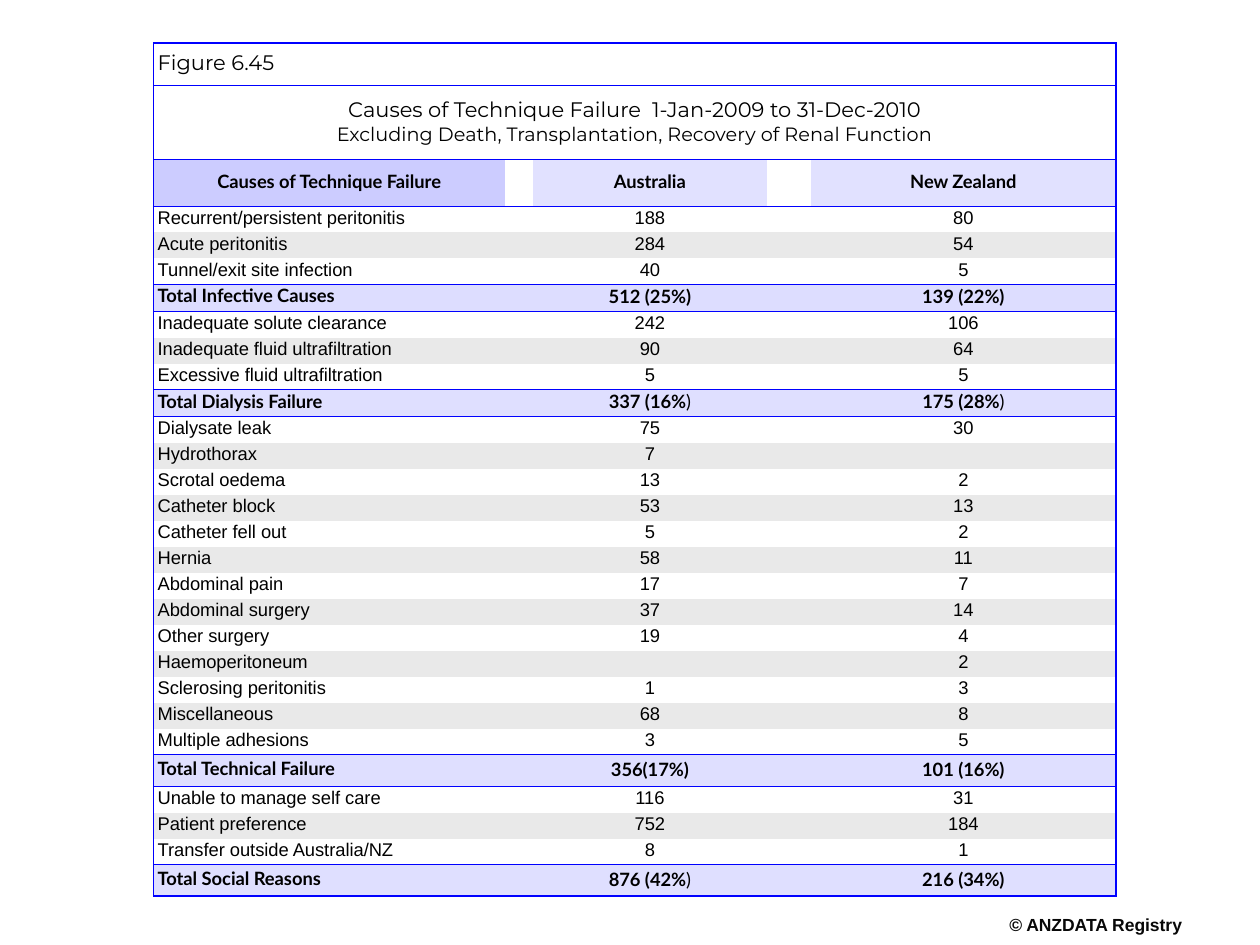
"""Build a slide with a table of causes of technique failure in Australia and New Zealand."""
from lxml import etree
from pptx import Presentation
from pptx import util as u
from pptx.dml.color import RGBColor
from pptx.enum import text
from pptx.oxml.ns import qn

COLORS = {"text": "000000", "credit": "080808", "border": "0000FF", "band": "E9E9E9",
          "head": "CCCCFF", "country": "E1E1FF", "infective": "DDDDFF", "total": "DFDFFF"}
SIZE = 10.5
EMPTY_SIZE = 8
DATA_HEIGHT = 14.86
GROUPS = [
    ([("Recurrent/persistent peritonitis", "188", "80"),
      ("Acute peritonitis", "284", "54"),
      ("Tunnel/exit site infection", "40", "5")],
     ("Total Infective Causes", "512 (25%)", "139 (22%)"), 15.7, "infective"),
    ([("Inadequate solute clearance", "242", "106"),
      ("Inadequate fluid ultrafiltration", "90", "64"),
      ("Excessive fluid ultrafiltration", "5", "5")],
     ("Total Dialysis Failure", "337 (16%)", "175 (28%)"), 15.4, "total"),
    ([("Dialysate leak", "75", "30"),
      ("Hydrothorax", "7", ""),
      ("Scrotal oedema", "13", "2"),
      ("Catheter block", "53", "13"),
      ("Catheter fell out", "5", "2"),
      ("Hernia", "58", "11"),
      ("Abdominal pain", "17", "7"),
      ("Abdominal surgery", "37", "14"),
      ("Other surgery", "19", "4"),
      ("Haemoperitoneum", "", "2"),
      ("Sclerosing peritonitis", "1", "3"),
      ("Miscellaneous", "68", "8"),
      ("Multiple adhesions", "3", "5")],
     ("Total Technical Failure", "356(17%)", "101 (16%)"), 18.4, "total"),
    ([("Unable to manage self care", "116", "31"),
      ("Patient preference", "752", "184"),
      ("Transfer outside Australia/NZ", "8", "1")],
     ("Total Social Reasons", "876 (42%)", "216 (34%)"), 18, "total"),
]
LIGHT_BRACKET = {"337 (16%)", "175 (28%)", "876 (42%)"}


def write(paragraph, words, font, size, bold=False, centred=True, spacing=0.85, after=0, color="text"):
    paragraph.text = words
    paragraph.line_spacing = spacing
    paragraph.space_after = u.Pt(after)
    paragraph.alignment = text.PP_ALIGN.CENTER if centred else text.PP_ALIGN.LEFT
    if words in LIGHT_BRACKET:
        paragraph.text = words[:-1]
        paragraph.add_run().text = ")"
    for run in paragraph.runs:
        run.font.name = font
        run.font.size = u.Pt(size)
        run.font.bold = bold and run.text != ")"
        run.font.color.rgb = RGBColor.from_string(COLORS[color])


def add_borders(cell, weights):
    properties = cell._tc.get_or_add_tcPr()
    for index, (side, weight) in enumerate(zip("LRTB", weights)):
        edge = etree.Element(qn(f"a:ln{side}"), w=str(u.Pt(weight)))
        if weight:
            fill = etree.SubElement(edge, qn("a:solidFill"))
            etree.SubElement(fill, qn("a:srgbClr"), val=COLORS["border"])
        else:
            etree.SubElement(edge, qn("a:noFill"))
        properties.insert(index, edge)


heights = [24.3, 42.5, 26.6]
fills = [[None] * 5, [None] * 5, ["head", None, "country", None, "country"]]
entries = [("Causes of Technique Failure", "Australia", "New Zealand")]
kinds = ["title", "title", "head"]
below = [1, 1, 1]
for causes, total, total_height, total_fill in GROUPS:
    for position, cause in enumerate(causes):
        entries.append(cause)
        heights.append(DATA_HEIGHT)
        fills.append(["band" if position % 2 else None] * 5)
        kinds.append("cause")
        below.append(0.75 if position == len(causes) - 1 else 0)
    entries.append(total)
    heights.append(total_height)
    fills.append([total_fill] * 5)
    kinds.append("total")
    below.append(0.75)
below[-1] = 1
above = [1] + below[:-1]

prs = Presentation()
prs.slide_width, prs.slide_height = u.Pt(720), u.Pt(540)
slide = prs.slides.add_slide(prs.slide_layouts[6])

widths = [200.8, 16, 133.7, 25.1, 174.4]
frame = slide.shapes.add_table(len(heights), len(widths), u.Pt(87.8), u.Pt(24.5),
                               u.Pt(sum(widths)), u.Pt(sum(heights)))
failures = frame.table
failures.first_row = failures.horz_banding = False
failures._tbl.tblPr.find(qn("a:tableStyleId")).text = "{2D5ABB26-0587-4C30-8999-92F81FD0307C}"
for column, width in zip(failures.columns, widths):
    column.width = u.Pt(width)

for r, (row, height) in enumerate(zip(failures.rows, heights)):
    row.height = u.Pt(height)
    kind = kinds[r]
    for c, cell in enumerate(row.cells):
        cell.margin_left = cell.margin_right = u.Pt(2.3)
        cell.margin_top = cell.margin_bottom = u.Pt(1.3)
        cell.vertical_anchor = text.MSO_ANCHOR.MIDDLE
        if fills[r][c]:
            cell.fill.solid()
            cell.fill.fore_color.rgb = RGBColor.from_string(COLORS[fills[r][c]])
        else:
            cell.fill.background()
        closes_row = c == 4 or (kind == "title" and c == 0)
        add_borders(cell, (int(c == 0), int(closes_row), above[r], below[r]))
        paragraph = cell.text_frame.paragraphs[0]
        words = entries[r - 2][c // 2] if kind != "title" and c % 2 == 0 else ""
        if words:
            write(paragraph, words, "Arial" if kind == "cause" else "Lato", SIZE,
                  bold=kind != "cause", centred=c > 0 or kind == "head",
                  spacing=0.75 if kind == "total" and c == 0 else 0.85,
                  after=0 if kind == "head" or (kind == "total" and c == 0) else 14)
        elif kind != "title" or c > 0:
            ending = etree.SubElement(paragraph._p, qn("a:endParaRPr"), sz=str(EMPTY_SIZE * 100))
            etree.SubElement(ending, qn("a:latin"), typeface="Arial")

for r in range(2):
    failures.cell(r, 0).merge(failures.cell(r, 4))
write(failures.cell(0, 0).text_frame.paragraphs[0], "Figure 6.45", "Montserrat", 12, centred=False)
heading = failures.cell(1, 0).text_frame
write(heading.paragraphs[0], "Causes of Technique Failure  1-Jan-2009 to 31-Dec-2010", "Montserrat", 12)
exclusions = heading.add_paragraph()
write(exclusions, "Excluding Death, Transplantation, Recovery of Renal Function", "Montserrat", 11)
exclusions.space_before = u.Pt(2.3)

credit = slide.shapes.add_textbox(u.Pt(575.3), u.Pt(524.2), u.Pt(101.5), u.Pt(12.2)).text_frame
credit.margin_left = credit.margin_right = credit.margin_top = credit.margin_bottom = 0
credit.word_wrap = False
write(credit.paragraphs[0], "© ANZDATA Registry", "Arial", 10, bold=True, color="credit")

prs.save("out.pptx")
